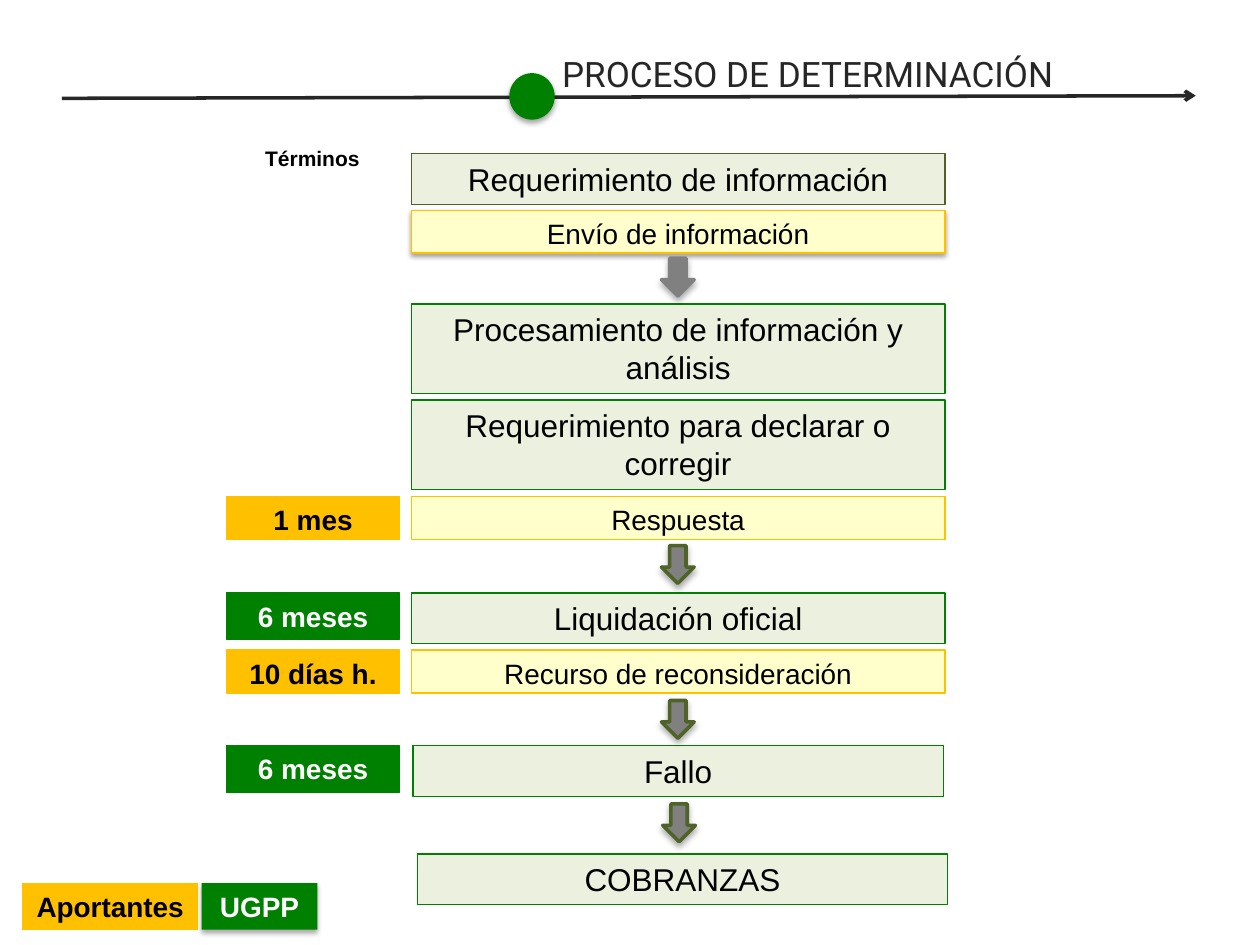
from dataclasses import dataclass
from typing import NamedTuple, Optional

from pptx import Presentation
from pptx.dml.color import RGBColor
from pptx.enum.shapes import MSO_CONNECTOR, MSO_SHAPE
from pptx.enum.text import MSO_ANCHOR, PP_ALIGN
from pptx.oxml.ns import qn
from pptx.oxml.xmlchemy import OxmlElement
from pptx.util import Pt

RECT, OVAL, DOWN_ARROW = MSO_SHAPE.RECTANGLE, MSO_SHAPE.OVAL, MSO_SHAPE.DOWN_ARROW
STRAIGHT = MSO_CONNECTOR.STRAIGHT
TOP = MSO_ANCHOR.TOP
LEFT, CENTER = PP_ALIGN.LEFT, PP_ALIGN.CENTER
TITLE_ONLY = 5


@dataclass(frozen=True)
class Theme:
    font: str = "Arial"
    title_font: str = "Roboto"
    title_size: float = 20
    step_size: float = 18
    label_size: float = 16
    heading_size: float = 12
    thin: float = 0.75
    thick: float = 2
    ink: str = "262626"
    black: str = "000000"
    white: str = "FFFFFF"
    green: str = "008000"
    olive: str = "4F6228"
    pale_green: str = "EBF1DE"
    pale_yellow: str = "FFFFCC"
    amber: str = "FFC000"
    gray: str = "808080"


THEME = Theme()


class Shadow(NamedTuple):
    alpha: float
    blur: float
    dist: float


SOFT = Shadow(35, 3.1, 1.8)
REPLY_SHADOW = Shadow(38, 3.1, 1.6)
ARROW_SHADOW = Shadow(32, 3.5, 2.2)


class Style(NamedTuple):
    fill: str
    line: Optional[str]
    color: str
    size: float
    bold: bool = False


STEP = Style(THEME.pale_green, THEME.green, THEME.black, THEME.step_size)
FIRST_STEP = STEP._replace(line=THEME.olive)
REPLY = Style(THEME.pale_yellow, THEME.amber, THEME.black, THEME.label_size)
PAYER = Style(THEME.amber, THEME.amber, THEME.black, THEME.label_size, True)
AGENCY = Style(THEME.green, THEME.green, THEME.white, THEME.label_size, True)
HEADING = Style(THEME.white, None, THEME.black, THEME.heading_size, True)


@dataclass(frozen=True)
class Box:
    text: str
    style: Style
    left: float
    top: float
    width: float
    height: float
    shadow: Optional[Shadow] = None


@dataclass(frozen=True)
class Arrow:
    left: float
    top: float
    line: str = THEME.olive


STEP_X, STEP_W, STEP_H, TALL_H = 235, 305, 29, 51
REPLY_H = 24.5
TERM_X, TERM_W, TERM_H = 129.6, 98.6, 26.6
LEGEND_Y = 504.7

BOXES = [
    Box("Términos", HEADING, TERM_X, 79.9, 97.9, 21.6),
    Box("Requerimiento de información", FIRST_STEP, STEP_X, 87.8, STEP_W, STEP_H),
    Box("Envío de información", REPLY, STEP_X, 120.2, STEP_W, REPLY_H, REPLY_SHADOW),
    Box("Procesamiento de información y análisis", STEP, STEP_X, 173.8, STEP_W, TALL_H),
    Box("Requerimiento para declarar o corregir", STEP, STEP_X, 228.6, STEP_W, TALL_H),
    Box("1 mes", PAYER, TERM_X, 283.7, TERM_W, REPLY_H),
    Box("Respuesta", REPLY, STEP_X, 283.7, STEP_W, REPLY_H),
    Box("6 meses", AGENCY, TERM_X, 338.8, TERM_W, TERM_H),
    Box("Liquidación oficial", STEP, STEP_X, 338.8, STEP_W, STEP_H),
    Box("10 días h.", PAYER, TERM_X, 371.5, TERM_W, REPLY_H),
    Box("Recurso de reconsideración", REPLY, STEP_X, 371.5, STEP_W, REPLY_H),
    Box("6 meses", AGENCY, TERM_X, 426.2, TERM_W, TERM_H),
    Box("Fallo", STEP, 236, 426.2, 303, STEP_H),
    Box("COBRANZAS", STEP, 238.5, 488, 303, STEP_H),
    Box("Aportantes", PAYER, 13, LEGEND_Y, 100, TERM_H),
    Box("UGPP", AGENCY._replace(line=None), 115.2, LEGEND_Y, 66.2, TERM_H, SOFT),
]

ARROWS = [
    Arrow(378, 147.6, THEME.gray),
    Arrow(378, 311.8),
    Arrow(378, 400.3),
    Arrow(378.7, 459.4),
]


def rgb(value: str) -> RGBColor:
    return RGBColor.from_string(value)


def format_text(tf, text: str, font: str, size: float, color: str, bold: bool, align) -> None:
    tf.text = text
    tf.word_wrap = True
    tf.vertical_anchor = TOP
    p = tf.paragraphs[0]
    p.alignment = align
    f = p.runs[0].font
    f.name, f.size, f.bold = font, Pt(size), bold
    f.color.rgb = rgb(color)


def add_shadow(sp, shadow: Shadow) -> None:
    outer = OxmlElement("a:outerShdw")
    outer.set("blurRad", str(int(Pt(shadow.blur))))
    outer.set("dist", str(int(Pt(shadow.dist))))
    outer.set("dir", "5400000")
    outer.set("rotWithShape", "0")
    color = OxmlElement("a:srgbClr")
    color.set("val", THEME.black)
    alpha = OxmlElement("a:alpha")
    alpha.set("val", str(int(shadow.alpha * 1000)))
    color.append(alpha)
    outer.append(color)
    sp._element.spPr.find(qn("a:effectLst")).append(outer)


def add_preset(s, kind, left: float, top: float, width: float, height: float, fill: str,
               line: Optional[str], weight: float, shadow: Optional[Shadow]):
    sp = s.shapes.add_shape(kind, Pt(left), Pt(top), Pt(width), Pt(height))
    sp.shadow.inherit = False
    sp.fill.solid()
    sp.fill.fore_color.rgb = rgb(fill)
    if line:
        sp.line.color.rgb = rgb(line)
        sp.line.width = Pt(weight)
    else:
        sp.line.fill.background()
    if shadow:
        add_shadow(sp, shadow)
    return sp


def add_box(s, box: Box) -> None:
    st = box.style
    sp = add_preset(s, RECT, box.left, box.top, box.width, box.height,
                    st.fill, st.line, THEME.thin, box.shadow)
    format_text(sp.text_frame, box.text, THEME.font, st.size, st.color, st.bold, CENTER)


def add_arrow(s, arrow: Arrow) -> None:
    add_preset(s, DOWN_ARROW, arrow.left, arrow.top, 18.7, 21.6,
               THEME.gray, arrow.line, THEME.thick, ARROW_SHADOW)


def add_header(s) -> None:
    rule = s.shapes.add_connector(STRAIGHT, Pt(35.3), Pt(56.2), Pt(683.3), Pt(54.7))
    rule.line.color.rgb = rgb(THEME.ink)
    rule.line.width = Pt(THEME.thick)
    tail = OxmlElement("a:tailEnd")
    tail.set("type", "arrow")
    rule.line._get_or_add_ln().append(tail)
    rule._element.spPr.append(OxmlElement("a:effectLst"))
    title = s.shapes.title
    title.left, title.top, title.width, title.height = Pt(314), Pt(26.6), Pt(378.7), Pt(31)
    format_text(title.text_frame, "PROCESO DE DETERMINACIÓN", THEME.title_font,
                THEME.title_size, THEME.ink, False, LEFT)
    add_preset(s, OVAL, 291, 41.8, 26, 26.6, THEME.green, None, THEME.thin, SOFT)


def main() -> None:
    prs = Presentation()
    prs.slide_width, prs.slide_height = Pt(720), Pt(540)
    s = prs.slides.add_slide(prs.slide_layouts[TITLE_ONLY])
    add_header(s)
    for box in BOXES:
        add_box(s, box)
    for arrow in ARROWS:
        add_arrow(s, arrow)
    prs.save("out.pptx")


if __name__ == "__main__":
    main()
